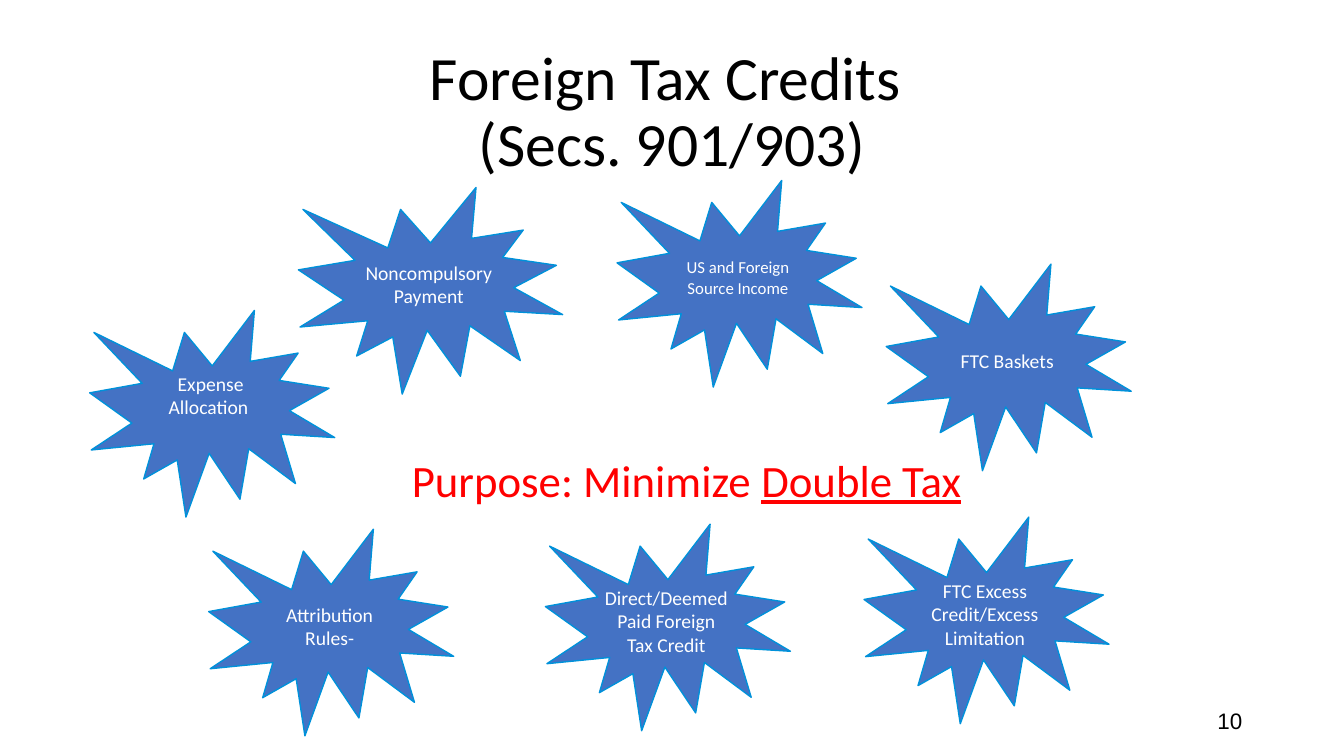
import pptx
import pptx.util
import pptx.dml.color
import pptx.enum.shapes
import pptx.enum.text

Inches = pptx.util.Inches
Pt = pptx.util.Pt
ALIGN = pptx.enum.text.PP_ALIGN
ANCHOR = pptx.enum.text.MSO_ANCHOR

COLORS = {
    "text": "000000",
    "burst": "4472C4",
    "burst_line": "0091DA",
    "burst_text": "FFFFFF",
    "purpose": "FF0000",
}
INSET = 0.06
BURST_WIDTH, BURST_HEIGHT = 2.43, 2.05

BURSTS = [
    ("Expense Allocation ", 0.89, 3.08, {"bottom": 0.3}),
    ("US and Foreign Source Income", 6.12, 1.79, {"size": 12}),
    ("FTC Baskets", 8.79, 2.62, {}),
    ("FTC Excess Credit/Excess Limitation", 8.57, 5.13, {}),
    ("Direct/Deemed Paid Foreign Tax Credit", 5.41, 5.2, {}),
    ("Attribution Rules-", 2.07, 5.25, {}),
    ("Noncompulsory Payment", 2.96, 1.86, {"width": 2.62}),
]


def rgb(name):
    return pptx.dml.color.RGBColor.from_string(COLORS[name])


def apply(obj, values):
    for name, value in values.items():
        setattr(obj, name, value)


def format_frame(tf, anchor, **margins):
    values = {"word_wrap": True, "auto_size": pptx.enum.text.MSO_AUTO_SIZE.NONE,
              "vertical_anchor": anchor}
    values.update({f"margin_{side}": Inches(size) for side, size in margins.items()})
    apply(tf, values)


def format_font(font, size, color, name="Calibri", **extra):
    apply(font, {"name": name, "size": Pt(size), **extra})
    font.color.rgb = rgb(color)


def insets(bottom=INSET):
    return {"left": INSET, "top": INSET, "right": INSET, "bottom": bottom}


def add_title(slide, text):
    sp = slide.shapes.title
    apply(sp, {"left": Inches(0.92), "top": Inches(0.4),
               "width": Inches(11.5), "height": Inches(1.45)})
    tf = sp.text_frame
    format_frame(tf, ANCHOR.MIDDLE)
    p = tf.paragraphs[0]
    p.text = text
    apply(p, {"alignment": ALIGN.CENTER, "line_spacing": 0.9})
    for r in p.runs:
        format_font(r.font, 44, "text")


def add_text(slide, box, runs, anchor, align, size, color, font="Calibri",
             space_after=0, margins=None):
    sp = slide.shapes.add_textbox(*map(Inches, box))
    tf = sp.text_frame
    format_frame(tf, anchor, **(margins or {}))
    p = tf.paragraphs[0]
    apply(p, {"alignment": align, "space_after": Pt(space_after)})
    for text, extra in runs:
        r = p.add_run()
        r.text = text
        format_font(r.font, size, color, font, **extra)


def add_burst(slide, text, left, top, width=BURST_WIDTH, size=14, bottom=INSET):
    sp = slide.shapes.add_shape(
        pptx.enum.shapes.MSO_SHAPE.EXPLOSION1,
        *map(Inches, (left, top, width, BURST_HEIGHT)))
    sp.shadow.inherit = False
    sp.fill.solid()
    sp.fill.fore_color.rgb = rgb("burst")
    sp.line.color.rgb = rgb("burst_line")
    sp.line.width = Pt(1)
    tf = sp.text_frame
    format_frame(tf, ANCHOR.MIDDLE, **insets(bottom))
    p = tf.paragraphs[0]
    p.alignment = ALIGN.CENTER
    r = p.add_run()
    r.text = text
    format_font(r.font, size, "burst_text")


def main():
    prs = pptx.Presentation()
    apply(prs, {"slide_width": Inches(13.33), "slide_height": Inches(7.5)})
    slide = prs.slides.add_slide(prs.slide_layouts[5])

    add_title(slide, "Foreign Tax Credits \v(Secs. 901/903)")
    add_text(slide, (9.42, 6.95, 3, 0.4), [("10", {})],
             ANCHOR.MIDDLE, ALIGN.RIGHT, 16, "text", font="Arial")
    for text, left, top, options in BURSTS:
        add_burst(slide, text, left, top, **options)
    add_text(slide, (3.96, 4.43, 5.7, 0.74),
             [("Purpose: Minimize ", {}), ("Double Tax", {"underline": True})],
             ANCHOR.TOP, ALIGN.CENTER, 32, "purpose", space_after=6, margins=insets())

    prs.save("out.pptx")


if __name__ == "__main__":
    main()
